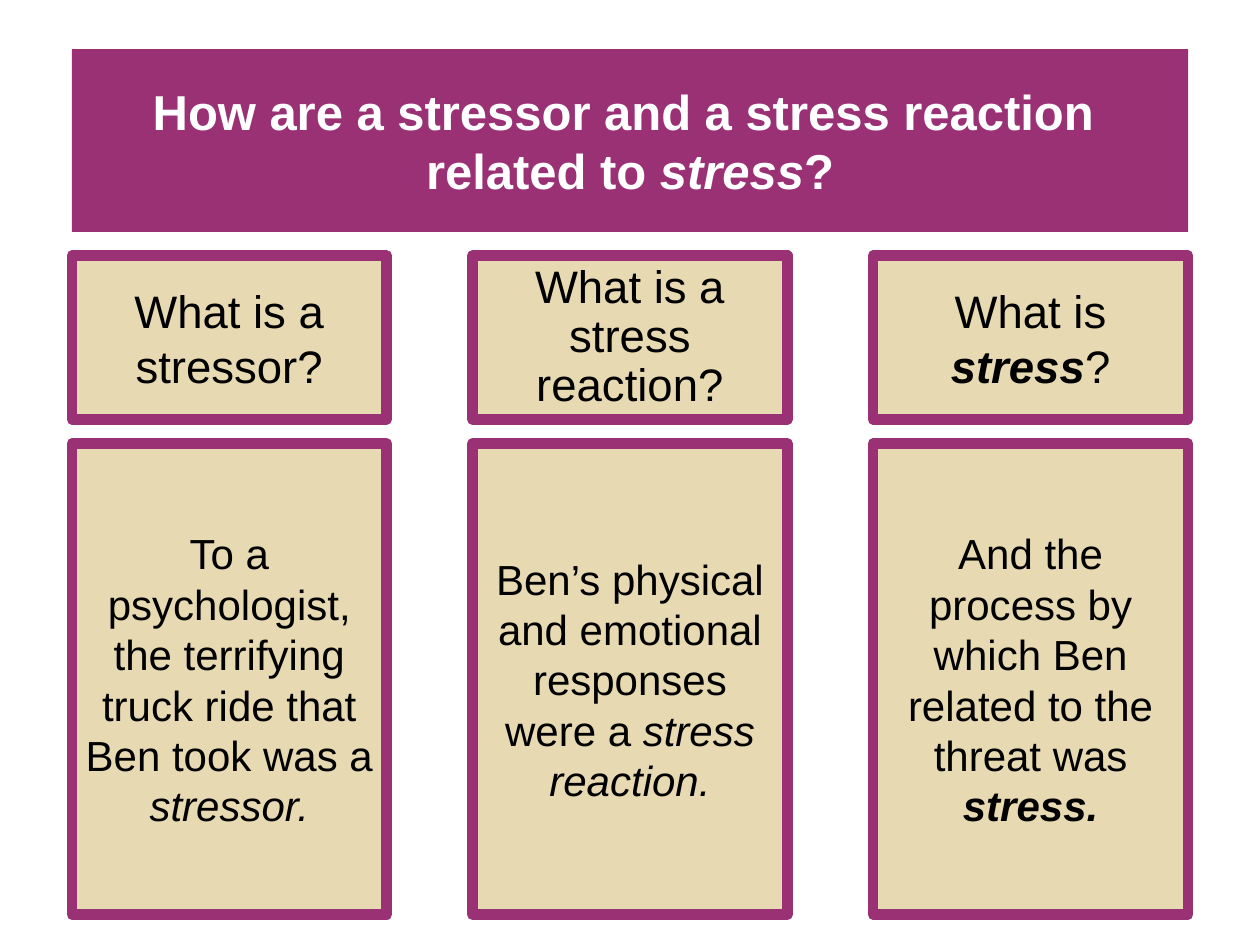
from pptx import Presentation
from pptx.dml.color import RGBColor
from pptx.enum.shapes import MSO_SHAPE
from pptx.enum.text import MSO_ANCHOR, MSO_AUTO_SIZE, PP_ALIGN
from pptx.util import Inches, Pt

COLORS = {"plum": "9B3175", "sand": "E7D9B1", "white": "FFFFFF", "black": "000000"}
LEFT, COLUMN_STEP, COLUMN_WIDTH = 0.57, 3.18, 2.5
QUESTION_TOP, QUESTION_HEIGHT = 2.03, 1.3
ANSWER_TOP, ANSWER_HEIGHT = 3.52, 3.74

# Each text is a list of (words, style); style holds "b" and/or "i"
TITLE = [("How are a stressor and a stress reaction \n", ""),
         ("related to ", ""), ("stress", "i"), ("?", "")]
# Question, its line spacing, answer
COLUMNS = [
    ([("What is a stressor?", "")], 1.0,
     [("To a psychologist, the terrifying truck ride that Ben took was a ", ""),
      ("stressor.", "i")]),
    ([("What is a stress reaction?", "")], 0.9,
     [("Ben’s physical and emotional responses were a ", ""),
      ("stress reaction.", "i")]),
    ([("What is ", ""), ("stress", "bi"), ("?", "")], 1.0,
     [("And the process by which Ben related to the threat was ", ""),
      ("stress.", "bi")]),
]


def color(name):
    return RGBColor.from_string(COLORS[name])


def fill_shape(shape, name):
    shape.fill.solid()
    shape.fill.fore_color.rgb = color(name)


def write_text(shape, spans, size, name, spacing=1.0):
    frame = shape.text_frame
    frame.word_wrap = True
    frame.auto_size = MSO_AUTO_SIZE.NONE
    frame.vertical_anchor = MSO_ANCHOR.MIDDLE
    para = frame.paragraphs[0]
    para.alignment = PP_ALIGN.CENTER
    para.line_spacing = spacing
    para.font.name = "Arial"
    para.font.size = Pt(size)
    para.font.color.rgb = color(name)
    for words, style in spans:
        span = para.add_run()
        span.text = words.rstrip("\n")
        if "b" in style:
            span.font.bold = True
        if "i" in style:
            span.font.italic = True
        if words.endswith("\n"):
            para.add_line_break()


def add_title(page):
    title = page.shapes.title
    title.left, title.top = Inches(LEFT), Inches(0.39)
    title.width, title.height = Inches(8.86), Inches(1.45)
    fill_shape(title, "plum")
    write_text(title, TITLE, 28, "white")
    title.text_frame.paragraphs[0].font.bold = True


def add_box(page, left, top, height, spans, size, spacing=1.0):
    box = page.shapes.add_shape(MSO_SHAPE.RECTANGLE, Inches(left), Inches(top),
                                Inches(COLUMN_WIDTH), Inches(height))
    box.shadow.inherit = False
    fill_shape(box, "sand")
    box.line.color.rgb = color("plum")
    box.line.width = Pt(6)
    write_text(box, spans, size, "black", spacing)


def main():
    deck = Presentation()
    deck.slide_width, deck.slide_height = Inches(10), Inches(7.5)
    page = deck.slides.add_slide(deck.slide_layouts[5])
    add_title(page)

    # One column per question, with its answer below
    for index, (question, spacing, answer) in enumerate(COLUMNS):
        left = LEFT + index * COLUMN_STEP
        add_box(page, left, QUESTION_TOP, QUESTION_HEIGHT, question, 26, spacing)
        add_box(page, left, ANSWER_TOP, ANSWER_HEIGHT, answer, 24)

    deck.save("out.pptx")


if __name__ == "__main__":
    main()
